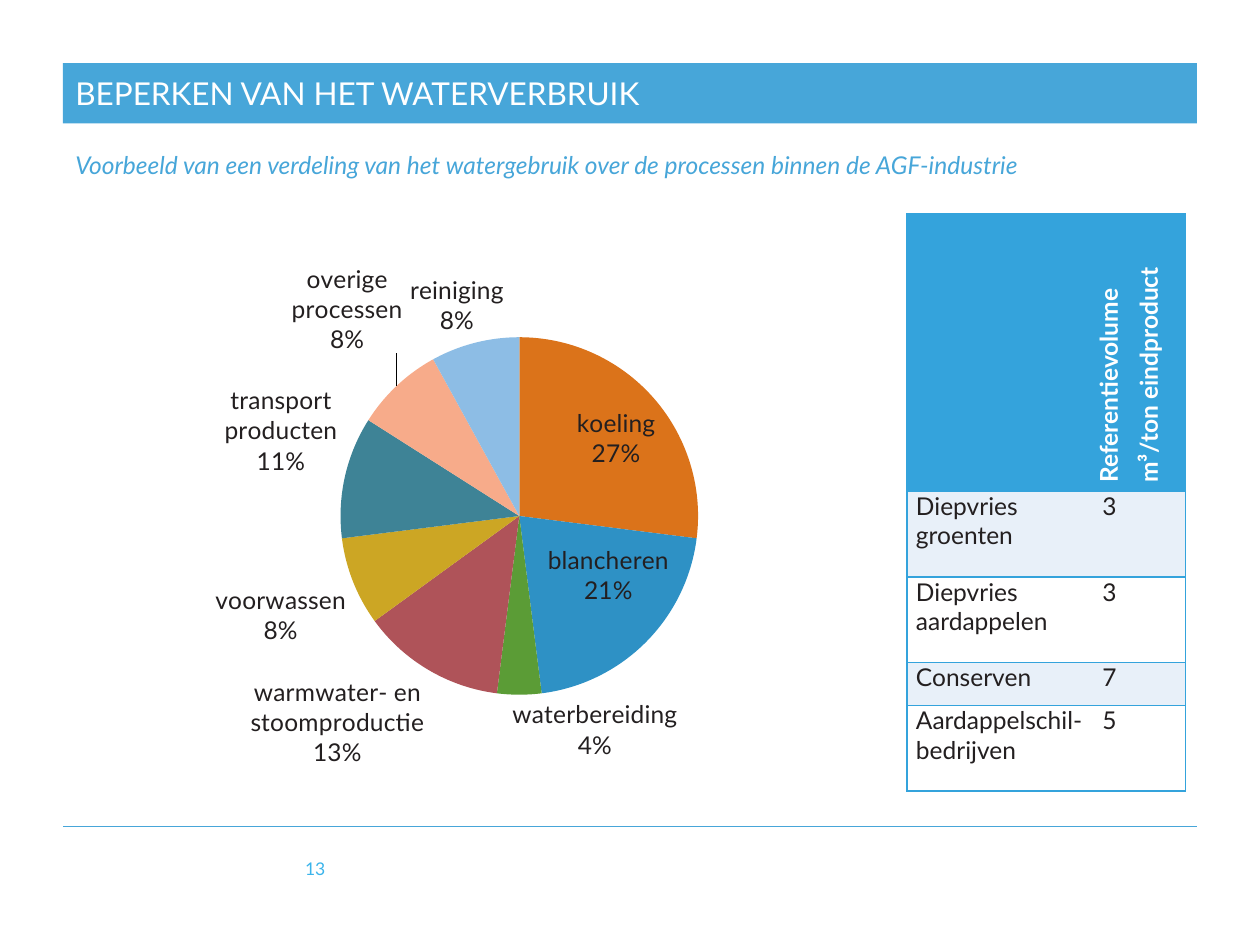
from lxml.etree import SubElement
from pptx import Presentation
from pptx.chart.data import CategoryChartData
from pptx.dml.color import RGBColor
from pptx.enum.chart import XL_CHART_TYPE, XL_LABEL_POSITION
from pptx.enum.shapes import MSO_CONNECTOR, MSO_SHAPE
from pptx.enum.text import MSO_ANCHOR, PP_ALIGN
from pptx.oxml import parse_xml
from pptx.oxml.ns import nsdecls, qn
from pptx.util import Inches, Pt

FONT = "Lato"
COLORS = {
    "bar": "47A6D9", "grid": "34A3DC", "number": "3BB4EB", "text": "231F20",
    "white": "FFFFFF", "band": "E8F0F9",
}
TITLE = "BEPERKEN VAN HET WATERVERBRUIK"
SUBTITLE = "Voorbeeld van een verdeling van het watergebruik over de processen binnen de AGF-industrie"
PAGE_NUMBER = "13"
WATER_USE = [
    ("koeling", 27, "DB731A"),
    ("blancheren", 21, "2E91C5"),
    ("waterbereiding", 4, "5B9C36"),
    ("warmwater- en stoomproductie", 13, "AF5359"),
    ("voorwassen", 8, "CCA624"),
    ("transport producten", 11, "3E8396"),
    ("overige processen", 8, "F7AB8A"),
    ("reiniging", 8, "8DBDE5"),
]
MOVED_LABELS = {2: (0.083, -0.006), 6: (0.012, -0.049), 7: (0.034, -0.002)}
PLOT_LAYOUT = {"x": 0.325, "y": 0.153, "w": 0.392, "h": 0.664}
TABLE_HEADER = ["Referentievolume", "m³/ton eindproduct"]
VOLUMES = [
    ("Diepvries groenten", "3"),
    ("Diepvries aardappelen", "3"),
    ("Conserven", "7"),
    ("Aardappelschil-bedrijven", "5"),
]
COLUMN_WIDTHS = [1.48, 0.73]
ROW_HEIGHTS = [2.2, 0.68, 0.68, 0.34, 0.68]


def rgb(name):
    return RGBColor.from_string(COLORS.get(name, name))


def style_font(font, size, color, bold=False, italic=False):
    font.name, font.size = FONT, Pt(size)
    font.bold, font.italic = bold, italic
    font.color.rgb = rgb(color)


def add_run(paragraph, text, size, color, **style):
    run = paragraph.add_run()
    run.text = text
    style_font(run.font, size, color, **style)


def add_text_box(slide, box):
    frame = slide.shapes.add_textbox(*map(Inches, box)).text_frame
    frame.word_wrap = True
    return frame


def add_title(slide):
    bar = slide.shapes.add_shape(MSO_SHAPE.RECTANGLE, *map(Inches, (0.5, 0.5, 9, 0.48)))
    bar.shadow.inherit = False
    bar.fill.solid()
    bar.fill.fore_color.rgb = rgb("bar")
    bar.line.fill.background()
    bar.text_frame.vertical_anchor = MSO_ANCHOR.MIDDLE
    paragraph = bar.text_frame.paragraphs[0]
    paragraph.alignment = PP_ALIGN.LEFT
    add_run(paragraph, TITLE, 18, "white")

    paragraph = add_text_box(slide, (0.5, 1.14, 9, 0.78)).paragraphs[0]
    paragraph.space_before = Pt(2.8)
    add_run(paragraph, SUBTITLE, 14, "bar", italic=True)


def add_footer(slide):
    line = slide.shapes.add_connector(
        MSO_CONNECTOR.STRAIGHT, *map(Inches, (0.5, 6.56, 9.5, 6.56)))
    line.line.color.rgb = rgb("bar")
    line.line.width = Pt(0.5)
    SubElement(line._element.spPr, qn("a:effectLst"))
    frame = add_text_box(slide, (1.99, 6.69, 0.69, 0.4))
    frame.vertical_anchor = MSO_ANCHOR.MIDDLE
    frame.paragraphs[0].alignment = PP_ALIGN.RIGHT
    add_run(frame.paragraphs[0], PAGE_NUMBER, 10, "number")


def manual_layout(**values):
    modes = '<c:layoutTarget val="inner"/><c:xMode val="edge"/><c:yMode val="edge"/>' if "w" in values else ""
    places = "".join(f'<c:{key} val="{value}"/>' for key, value in values.items())
    return parse_xml(
        f'<c:layout {nsdecls("c")}><c:manualLayout>{modes}{places}</c:manualLayout></c:layout>')


def add_pie(slide):
    data = CategoryChartData()
    data.categories = [name for name, _, _ in WATER_USE]
    data.add_series("Series 1", [value for _, value, _ in WATER_USE])
    chart = slide.shapes.add_chart(
        XL_CHART_TYPE.PIE, *map(Inches, (0.35, 2.02, 7.24, 4.28)), data).chart
    chart.has_title = chart.has_legend = False
    style_font(chart.font, 10, "text")
    series = chart.plots[0].series[0]
    for index, (_, _, color) in enumerate(WATER_USE):
        fill = series.points[index].format.fill
        fill.solid()
        fill.fore_color.rgb = rgb(color)

    labels = series.data_labels
    style_font(labels.font, 14, "text")
    labels.number_format, labels.number_format_is_linked = "0%", False
    labels.position = XL_LABEL_POSITION.BEST_FIT
    for index in MOVED_LABELS:
        label = series.points[index].data_label
        style_font(label.font, 14, "text")
        label.position = XL_LABEL_POSITION.OUTSIDE_END

    root = chart._chartSpace
    for group in root.xpath(".//c:dLbls | .//c:dLbl"):
        for tag, shown in (("showVal", "0"), ("showCatName", "1"), ("showPercent", "1")):
            group.find(qn(f"c:{tag}")).set("val", shown)
        group.find(qn("c:showBubbleSize")).addnext(
            parse_xml(f'<c:separator {nsdecls("c")}>\n</c:separator>'))
    for label in root.xpath(".//c:dLbl"):
        index = label.find(qn("c:idx"))
        x, y = MOVED_LABELS[int(index.get("val"))]
        index.addnext(manual_layout(x=x, y=y))
    plot_area = root.xpath(".//c:plotArea")[0]
    for layout in plot_area.findall(qn("c:layout")):
        plot_area.remove(layout)
    plot_area.insert(0, manual_layout(**PLOT_LAYOUT))


def fill_cell(cell, lines, fill, sides, color="text", bold=False):
    cell.margin_left = cell.margin_right = Inches(0.07)
    cell.margin_top = cell.margin_bottom = 0
    cell.fill.solid()
    cell.fill.fore_color.rgb = rgb(fill)
    for position, side in enumerate(sides):
        cell._tc.tcPr.insert(position, parse_xml(
            f'<a:ln{side} {nsdecls("a")} w="12700"><a:solidFill>'
            f'<a:srgbClr val="{COLORS["grid"]}"/></a:solidFill></a:ln{side}>'))
    for position, text in enumerate(lines):
        frame = cell.text_frame
        paragraph = frame.add_paragraph() if position else frame.paragraphs[0]
        paragraph.alignment = PP_ALIGN.JUSTIFY
        paragraph.space_after = Pt(6)
        add_run(paragraph, text, 14, color, bold=bold)


def add_volume_table(slide):
    table_frame = slide.shapes.add_table(
        len(ROW_HEIGHTS), len(COLUMN_WIDTHS), Inches(7.2), Inches(1.7),
        Inches(sum(COLUMN_WIDTHS)), Inches(sum(ROW_HEIGHTS)))
    table = table_frame.table
    table._tbl.tblPr.find(qn("a:tableStyleId")).text = "{2D5ABB26-0587-4C30-8999-92F81FD0307C}"
    for column, width in zip(table.columns, COLUMN_WIDTHS):
        column.width = Inches(width)
    for row, height in zip(table.rows, ROW_HEIGHTS):
        row.height = Inches(height)
    fill_cell(table.cell(0, 0), [], "grid", "LTB")
    fill_cell(table.cell(0, 1), TABLE_HEADER, "grid", "RTB", "white", True)
    table.cell(0, 1)._tc.tcPr.set("vert", "vert270")
    for row, values in enumerate(VOLUMES, 1):
        for column, (text, sides) in enumerate(zip(values, ("LTB", "RTB"))):
            fill_cell(table.cell(row, column), [text], "band" if row % 2 else "white", sides)


def main():
    presentation = Presentation()
    presentation.slide_width, presentation.slide_height = Inches(10), Inches(7.5)
    slide = presentation.slides.add_slide(presentation.slide_layouts[6])
    add_footer(slide)
    add_title(slide)
    add_volume_table(slide)
    add_pie(slide)
    presentation.save("out.pptx")


if __name__ == "__main__":
    main()
